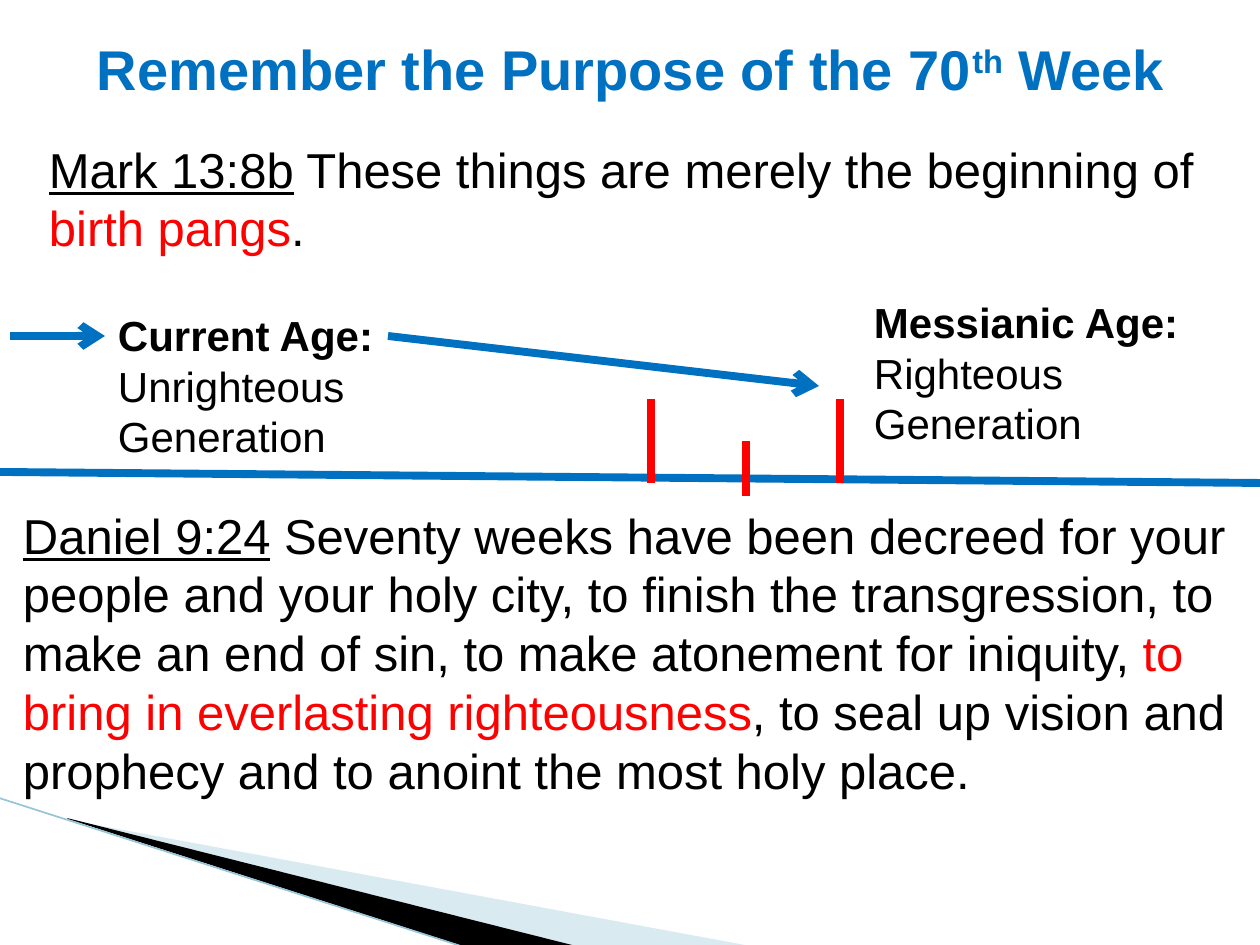
from lxml import etree
from pptx import Presentation
from pptx import util as u
from pptx.dml.color import RGBColor
from pptx.enum import shapes, text
from pptx.oxml.ns import qn

EMU_PER_PX = 914400 / 126
WIDTH, HEIGHT = 1260, 945

BLUE = RGBColor(0x00, 0x70, 0xC0)
RED = RGBColor(0xFF, 0x00, 0x00)
BLACK = RGBColor(0x00, 0x00, 0x00)
PALE_BLUE = RGBColor(0xA0, 0xCB, 0xDC)
EDGE_BLUE = RGBColor(0x97, 0xC5, 0xD8)


def px(length):
    return u.Emu(round(length * EMU_PER_PX))


class SlideBuilder:
    font_name = "Arial"
    line_width = 4.5

    def __init__(self, slide):
        self.slide = slide

    def text_box(self, box, size, runs, align=text.PP_ALIGN.LEFT,
                 anchor=text.MSO_ANCHOR.TOP, left_inset=13, top_inset=6):
        """Add one paragraph; each run is (wording, colour, set of styles)."""
        shape = self.slide.shapes.add_textbox(*map(px, box))
        frame = shape.text_frame
        frame.word_wrap = True
        frame.vertical_anchor = anchor
        frame.margin_left, frame.margin_top = px(left_inset), px(top_inset)
        paragraph = frame.paragraphs[0]
        paragraph.alignment = align
        for wording, color, styles in runs:
            run = paragraph.add_run()
            run.text = wording
            font = run.font
            font.name, font.size = self.font_name, u.Pt(size)
            font.color.rgb = color
            font.bold = "bold" in styles
            font.underline = "underline" in styles
            if "superscript" in styles:
                run._r.get_or_add_rPr().set("baseline", "30000")

    def line(self, start, end, color, width=line_width, arrow=False):
        connector = self.slide.shapes.add_connector(
            shapes.MSO_CONNECTOR.STRAIGHT, *map(px, (*start, *end)))
        connector.line.color.rgb = color
        connector.line.width = u.Pt(width)
        if arrow:
            outline = connector.line._get_or_add_ln()
            etree.SubElement(outline, qn("a:tailEnd"), type="arrow")
        etree.SubElement(connector._element.spPr, qn("a:effectLst"))

    def polygon(self, points, color, opacity=100):
        builder = self.slide.shapes.build_freeform(*points[0], scale=EMU_PER_PX)
        builder.add_line_segments(points[1:], close=True)
        shape = builder.convert_to_shape()
        shape.shadow.inherit = False
        shape.line.fill.background()
        shape.fill.solid()
        shape.fill.fore_color.rgb = color
        if opacity < 100:
            fill_color = shape._element.spPr.find(qn("a:solidFill"))[0]
            etree.SubElement(fill_color, qn("a:alpha"), val=str(opacity * 1000))


def main():
    presentation = Presentation()
    presentation.slide_width, presentation.slide_height = px(WIDTH), px(HEIGHT)
    builder = SlideBuilder(
        presentation.slides.add_slide(presentation.slide_layouts[6]))

    # Corner decoration
    builder.polygon([(69, 820), (750, 946), (575, 946), (69, 819)], PALE_BLUE, 40)
    builder.polygon([(67, 818), (576, 946), (469, 948), (68, 819)], BLACK)
    builder.line((-1, 798), (467, 948), EDGE_BLUE, width=0.95)

    # Title and opening verse
    builder.text_box((21, 126, 1218, 702), 28, [
        ("Mark 13:8b", BLACK, {"underline"}),
        (" These things are merely the beginning of ", BLACK, ()),
        ("birth pangs", RED, ()),
        (".", BLACK, ()),
    ], left_inset=28, top_inset=13)
    builder.text_box((42, 21, 1176, 95), 32, [
        ("Remember the Purpose of the 70", BLUE, {"bold"}),
        ("th", BLUE, {"bold", "superscript"}),
        (" Week", BLUE, {"bold"}),
    ], align=text.PP_ALIGN.CENTER, anchor=text.MSO_ANCHOR.MIDDLE)

    # Timeline with the start, end and middle of the week
    builder.line((0, 472), (WIDTH, 483), BLUE)
    for x, top, bottom in ((651, 399, 483), (840, 399, 483), (746, 441, 496)):
        builder.line((x, top), (x, bottom), RED)

    # Ages
    for left, top, age, generation in (
            (861, 291, "Messianic Age: ", "Righteous Generation"),
            (105, 304, "Current Age: ", "Unrighteous Generation")):
        builder.text_box((left, top, 378, 165), 24, [
            (age, BLACK, {"bold"}), (generation, BLACK, ())])
    builder.line((10, 336), (105, 336), BLUE, arrow=True)
    builder.line((388, 336), (819, 386), BLUE, arrow=True)

    # Closing verse
    builder.text_box((10, 499, 1250, 310), 28, [
        ("Daniel 9:24", BLACK, {"underline"}),
        (" Seventy weeks have been decreed for your people and your holy city, "
         "to finish the transgression, to make an end of sin, to make atonement "
         "for iniquity, ", BLACK, ()),
        ("to bring in everlasting righteousness", RED, ()),
        (", to seal up vision and prophecy and to anoint the most holy place.",
         BLACK, ()),
    ])

    presentation.save("out.pptx")


if __name__ == "__main__":
    main()
